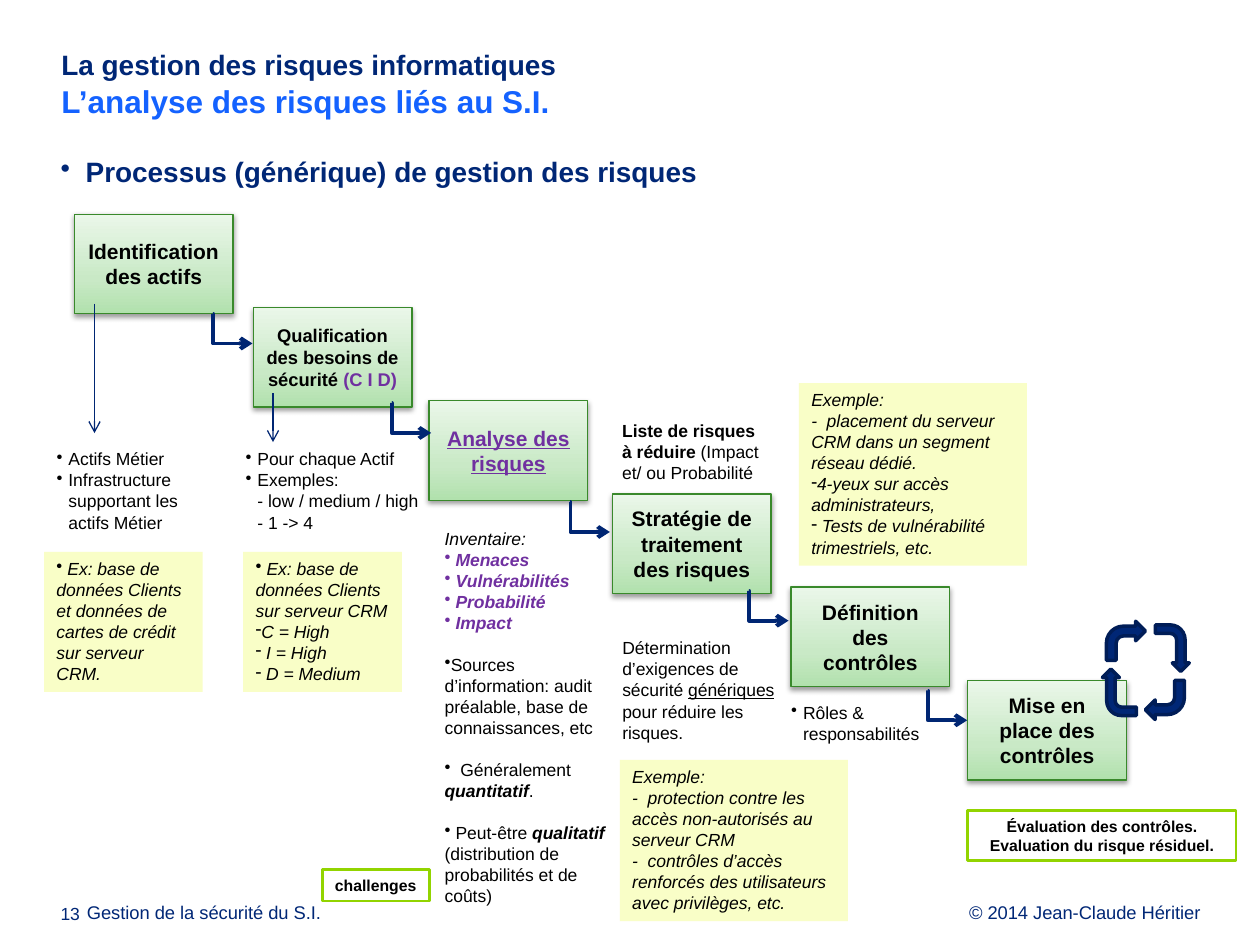
from dataclasses import dataclass

from lxml import etree
from pptx import Presentation
from pptx.dml.color import RGBColor
from pptx.enum.shapes import MSO_CONNECTOR, MSO_SHAPE
from pptx.enum.text import MSO_ANCHOR, PP_ALIGN
from pptx.oxml.ns import qn
from pptx.util import Pt

RECT, BENT = MSO_SHAPE.RECTANGLE, MSO_SHAPE.BENT_ARROW
LINE, ELBOW = MSO_CONNECTOR.STRAIGHT, MSO_CONNECTOR.ELBOW
TOP, MIDDLE = MSO_ANCHOR.TOP, MSO_ANCHOR.MIDDLE
LEFT, CENTER, RIGHT = PP_ALIGN.LEFT, PP_ALIGN.CENTER, PP_ALIGN.RIGHT


@dataclass(frozen=True)
class Theme:
    font: str = "Arial"
    navy: str = "002776"
    wire: str = "002673"
    edge: str = "001D57"
    blue: str = "1462FF"
    black: str = "000000"
    white: str = "FFFFFF"
    purple: str = "7030A0"
    green: str = "39892B"
    lime: str = "92D400"
    yellow: str = "F9FEC7"
    fade: tuple = ((0, "B1E1AD"), (35, "C9E9C6"), (100, "EAF7E9"))
    head: float = 18
    title: float = 16
    step: float = 12
    mid: float = 10.5
    body: float = 10
    small: float = 9


T = Theme()


def rgb(code):
    return RGBColor.from_string(code)


def node(parent, tag, **attrs):
    return etree.SubElement(parent, qn(tag), {k: str(v) for k, v in attrs.items()})


def item(runs, mark=None, hang=0, before=0):
    """One paragraph: a string or (text, format) runs, and its bullet."""
    runs = [(runs, {})] if isinstance(runs, str) else runs
    return runs, mark, hang, before


class Deck:
    def __init__(self, theme):
        self.theme = theme
        self.prs = Presentation()
        self.prs.slide_width, self.prs.slide_height = Pt(720), Pt(540)
        self.slide = self.prs.slides.add_slide(self.prs.slide_layouts[6])
        self.shapes = self.slide.shapes

    def text(self, shape, paras, align=LEFT, anchor=TOP, wrap=True,
             inset=(7.2, 3.6, 7.2, 3.6), lead=None, **base):
        frame = shape.text_frame
        left, top, right, bottom = map(Pt, inset)
        setup = dict(word_wrap=wrap, vertical_anchor=anchor, margin_left=left,
                     margin_top=top, margin_right=right, margin_bottom=bottom)
        for key, val in setup.items():
            setattr(frame, key, val)
        paras = [paras] if isinstance(paras, (str, tuple)) else paras
        for i, para in enumerate(paras):
            runs, mark, hang, before = item(para) if isinstance(para, str) else para
            p = frame.paragraphs[0] if i == 0 else frame.add_paragraph()
            p.alignment, p.space_before = align, Pt(before)
            if lead:
                p.line_spacing = Pt(lead)
            if mark:
                props = p._p.get_or_add_pPr()
                props.set("marL", str(Pt(hang)))
                props.set("indent", str(-Pt(hang)))
                node(props, "a:buChar", char=mark)
            for words, diff in runs:
                self.run(p, words, {**base, **diff})

    def run(self, p, words, form):
        form = {"name": self.theme.font, "size": self.theme.body,
                "color": self.theme.black, **form}
        color, size = form.pop("color"), form.pop("size")
        for i, part in enumerate(words.split("\n")):
            if i:
                p.add_line_break()
            r = p.add_run()
            r.text = part
            r.font.size, r.font.color.rgb = Pt(size), rgb(color)
            for key, val in form.items():
                setattr(r.font, key, val)

    def label(self, box, paras, **form):
        self.text(self.shapes.add_textbox(*map(Pt, box)), paras, **form)

    def shape(self, kind, box, fill=None, line=None, width=1.5, turn=0):
        shape = self.shapes.add_shape(kind, *map(Pt, box))
        shape.shadow.inherit = False
        shape.rotation = turn
        if fill:
            shape.fill.solid()
            shape.fill.fore_color.rgb = rgb(fill)
        if line:
            shape.line.color.rgb, shape.line.width = rgb(line), Pt(width)
        else:
            shape.line.fill.background()
        return shape

    def note(self, box, paras):
        self.text(self.shape(RECT, box, self.theme.yellow), paras, italic=True)

    def frame(self, box, paras, **form):
        shape = self.shape(RECT, box, self.theme.white, self.theme.lime)
        self.text(shape, paras, size=self.theme.small, bold=True, **form)

    def step(self, box, words, **form):
        shape = self.shape(RECT, box, line=self.theme.green, width=0.75)
        # Three-stop fade from the bottom up
        shape.fill.gradient()
        shape.fill.gradient_angle = 90
        props = shape._element.spPr
        stops = props.find(".//" + qn("a:gsLst"))
        for old in list(stops):
            stops.remove(old)
        for pos, color in self.theme.fade:
            node(node(stops, "a:gs", pos=pos * 1000), "a:srgbClr", val=color)
        # Soft shadow below
        shade = node(props.find(qn("a:effectLst")), "a:outerShdw", blurRad=Pt(3.1),
                     dist=Pt(1.6), dir=5400000, rotWithShape=0)
        node(node(shade, "a:srgbClr", val=self.theme.black), "a:alpha", val=38000)
        self.text(shape, words, **{"align": CENTER, "anchor": MIDDLE, "bold": True,
                                   "size": self.theme.step, **form})

    def arrow(self, kind, x, y, dx, dy, width):
        wire = self.shapes.add_connector(kind, Pt(x), Pt(y), Pt(x + dx), Pt(y + dy))
        wire.line.color.rgb, wire.line.width = rgb(self.theme.wire), Pt(width)
        props = wire._element.spPr
        node(props.find(qn("a:ln")), "a:tailEnd", type="arrow")
        node(props, "a:effectLst")
        if kind == ELBOW:
            guides = props.find(".//" + qn("a:avLst"))
            node(guides, "a:gd", name="adj1", fmla="val 400")


def main():
    d = Deck(T)

    # Footer
    foot = dict(inset=(0, 0, 0, 0), lead=10.8, color=T.navy)
    d.label((504, 517, 182.2, 11.5), "© 2014 Jean-Claude Héritier",
            align=RIGHT, size=T.mid, **foot)
    d.label((49.7, 517, 182.2, 11.5), "Gestion de la sécurité du S.I.", size=T.mid, **foot)
    d.label((34.6, 517, 18.7, 11.5), "13", **foot)

    # Title and heading
    head = dict(inset=(2.9, 0, 0, 0), size=T.title, bold=True, color=T.navy)
    d.label((32.2, 27.4, 663, 49.7),
            item([("La gestion des risques informatiques\n", {}),
                  ("L’analyse des risques liés au S.I.", dict(size=T.head, color=T.blue))]),
            **head)
    d.label((31.7, 88.6, 663, 30),
            item("Processus (générique) de gestion des risques", "•", 14.4), **head)

    # Staircase of steps
    steps = (
        (42.5, "Identification des actifs", {}),
        (144.7, item([("Qualification des besoins de sécurité ", {}),
                      ("(C I D)", dict(color=T.purple))]), dict(size=T.mid)),
        (245.2, "Analyse des risques", dict(color=T.purple, underline=True)),
        (350, "Stratégie de traitement des risques", {}),
        (452, "Définition des contrôles", {}),
        (553, "Mise en place des contrôles", {}),
    )
    for i, (x, words, form) in enumerate(steps):
        d.step((x, 122.4 + 53.28 * i, 90.7, 56.9), words, **form)
    for i, y in enumerate((179.3, 230.4, 287, 337.7, 394.6)):
        d.arrow(ELBOW, 121.7 + 102.1 * i, y, 22.6, 17, 2.25)

    # Assets
    d.arrow(LINE, 54, 173.5, 0, 74, 0.75)
    d.label((25.2, 252.7, 85, 55.4),
            [item("Actifs Métier", "•", 6.8),
             item("Infrastructure supportant les actifs Métier", "•", 6.8)])
    d.note((25.2, 315.4, 90.7, 79.9),
           item(" Ex: base de données Clients et données de cartes de crédit "
                "sur serveur CRM.", "•"))

    # Needs
    d.arrow(LINE, 156, 224.6, 0, 28, 0.75)
    d.label((133.2, 252.7, 118.8, 67.7),
            [item("Pour chaque Actif", "•", 6.8),
             item("Exemples: \n- low / medium / high\n- 1 -> 4", "•", 6.8)])
    d.note((139, 315.4, 90.7, 79.9),
           [item(" Ex: base de données Clients sur serveur CRM", "•")]
           + [item(t, "-") for t in ("C = High", " I = High", " D = Medium")])

    # Inventory
    key = dict(color=T.purple, bold=True, italic=True)
    strong = dict(bold=True, italic=True)
    d.label((247, 298, 108, 225.4),
            [item([("Inventaire:", dict(italic=True))])]
            + [item([(t, key)], "•")
               for t in (" Menaces", " Vulnérabilités", " Probabilité", " Impact")]
            + [item("Sources d’information: audit préalable, base de connaissances, etc",
                    "•", before=12),
               item([("  Généralement ", {}), ("quantitatif", strong), (".", {})],
                    "•", before=12),
               item([(" Peut-être ", {}), ("qualitatif", strong),
                     (" (distribution de probabilités et de coûts)", {})],
                    "•", before=12)])
    d.frame((184.3, 496.8, 61.2, 18), "challenges", wrap=False)

    # Strategy
    d.label((348.5, 236.2, 96.5, 43.9),
            item([("Liste de risques à réduire", dict(bold=True)),
                  (" (Impact et/ ou Probabilité", {})]))
    d.label((348.5, 360.7, 102.2, 67.7),
            item([("Détermination d’exigences de sécurité ", {}),
                  ("génériques", dict(underline=True)),
                  (" pour réduire les risques.", {})]))
    d.note((354.2, 434.2, 130.3, 92.2),
           "Exemple:\n-  protection contre les accès non-autorisés au serveur CRM\n"
           "-  contrôles d’accès renforcés des utilisateurs avec privilèges, etc.")

    # Controls
    d.note((456.5, 218.9, 130.3, 104.4),
           ["Exemple:\n-  placement du serveur CRM dans un segment réseau dédié.",
            item("4-yeux sur accès administrateurs,", "-"),
            item(" Tests de vulnérabilité trimestriels, etc.", "-")])

    # Cycle of arrows
    ring = ((632.2, 355, 22.3, 22.3), (656.6, 360.7, 26.6, 19.4),
            (654.5, 388.8, 22.3, 22.3), (626.4, 385.9, 26.6, 19.4))
    for i, box in enumerate(ring):
        d.shape(BENT, box, T.navy, T.edge, 2, turn=90 * i)

    # Review
    d.frame((553, 463, 153.4, 28.8),
            ["Évaluation des contrôles.", "Evaluation du risque résiduel."], align=CENTER)
    d.label((445, 397.4, 118.8, 31.7), item("Rôles & responsabilités", "•", 6.8))

    d.prs.save("out.pptx")


if __name__ == "__main__":
    main()
